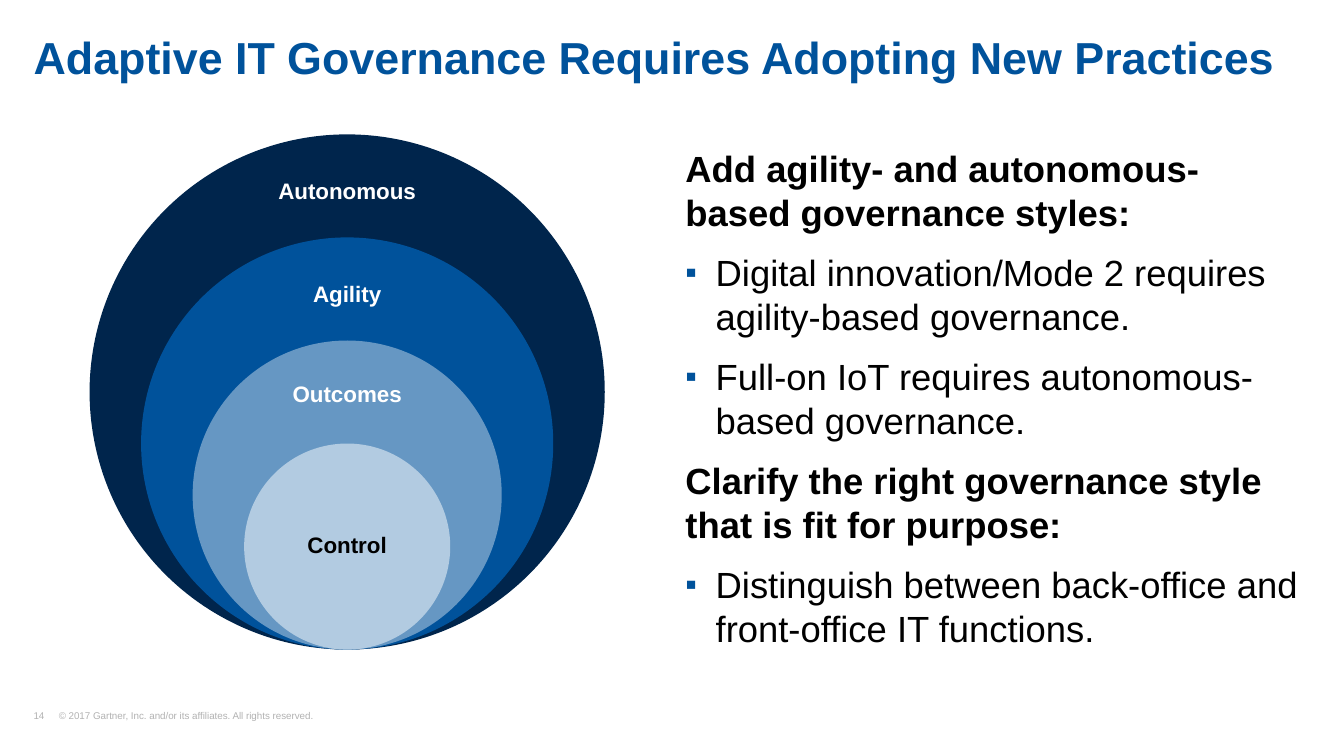
from dataclasses import dataclass

from lxml.etree import SubElement
from pptx import Presentation
from pptx.dml.color import RGBColor
from pptx.enum.shapes import MSO_SHAPE
from pptx.enum.text import MSO_ANCHOR, MSO_AUTO_SIZE, PP_ALIGN
from pptx.oxml.ns import qn
from pptx.util import Pt


@dataclass(frozen=True)
class Theme:
    font: str = "Arial"
    navy: str = "00254C"
    blue: str = "00529B"
    steel: str = "6697C3"
    pale: str = "B2CBE1"
    white: str = "FFFFFF"
    black: str = "000000"
    grey: str = "B2B2B2"
    title_size: float = 32
    body_size: float = 26
    label_size: float = 16
    footer_size: float = 7


THEME = Theme()

CENTER_X = 248
CIRCLES_BOTTOM = 464
RING_STEP = 73.6
LABEL_HEIGHT = 20

STYLES = [
    ("Autonomous", THEME.navy, THEME.white, 41.5),
    ("Agility", THEME.blue, THEME.white, 41),
    ("Outcomes", THEME.steel, THEME.white, 39),
    ("Control", THEME.pale, THEME.black, RING_STEP),
]

PRACTICES = [
    ("Add agility- and autonomous-based governance styles:", [
        "Digital innovation/Mode 2 requires agility-based governance.",
        "Full-on IoT requires autonomous-based governance.",
    ]),
    ("Clarify the right governance style that is fit for purpose:", [
        "Distinguish between back-office and front-office IT functions.",
    ]),
]


def write_text(paragraph, text, *, size, color, bold=False,
               align=PP_ALIGN.LEFT, line_spacing=1.0, space_after=0):
    paragraph.alignment = align
    paragraph.line_spacing = line_spacing
    paragraph.space_before = Pt(0)
    paragraph.space_after = Pt(space_after)
    run = paragraph.add_run()
    run.text = text
    run.font.name = THEME.font
    run.font.size = Pt(size)
    run.font.bold = bold
    run.font.color.rgb = RGBColor.from_string(color)


def place(shape, left, top, width, height):
    shape.left, shape.top = Pt(left), Pt(top)
    shape.width, shape.height = Pt(width), Pt(height)


def prepare_frame(shape, anchor=MSO_ANCHOR.TOP, top=0, right=0):
    frame = shape.text_frame
    frame.word_wrap = True
    frame.auto_size = MSO_AUTO_SIZE.NONE
    frame.vertical_anchor = anchor
    frame.margin_left = frame.margin_bottom = Pt(0)
    frame.margin_top, frame.margin_right = Pt(top), Pt(right)
    return frame


def add_text_frame(slide, left, top, width, height, **frame_format):
    shape = slide.shapes.add_textbox(Pt(left), Pt(top), Pt(width), Pt(height))
    return prepare_frame(shape, **frame_format)


def add_bullet(paragraph, indent):
    properties = paragraph._p.get_or_add_pPr()
    properties.set("marL", str(Pt(indent)))
    properties.set("indent", str(-Pt(indent)))
    color = SubElement(properties, qn("a:buClr"))
    SubElement(color, qn("a:srgbClr"), val=THEME.blue)
    SubElement(properties, qn("a:buSzPct"), val="90000")
    SubElement(properties, qn("a:buFont"), typeface=THEME.font)
    SubElement(properties, qn("a:buChar"), char="▪")


def add_tab_stop(paragraph, position):
    tabs = SubElement(paragraph._p.get_or_add_pPr(), qn("a:tabLst"))
    SubElement(tabs, qn("a:tab"), pos=str(Pt(position)), algn="l")


def add_title(slide, text):
    title = slide.shapes.title
    place(title, 24, 18, 911.5, 42.5)
    frame = prepare_frame(title, top=7.2)
    write_text(frame.paragraphs[0], text, size=THEME.title_size,
               color=THEME.blue, bold=True, line_spacing=0.9)


def add_circle(slide, diameter, fill):
    circle = slide.shapes.add_shape(
        MSO_SHAPE.OVAL, Pt(CENTER_X - diameter / 2),
        Pt(CIRCLES_BOTTOM - diameter), Pt(diameter), Pt(diameter))
    circle.shadow.inherit = False
    circle.fill.solid()
    circle.fill.fore_color.rgb = RGBColor.from_string(fill)
    circle.line.fill.background()


def add_governance_circles(slide):
    for index, (name, fill, color, label_offset) in enumerate(STYLES):
        diameter = RING_STEP * (len(STYLES) + 1 - index)
        add_circle(slide, diameter, fill)
        label_top = CIRCLES_BOTTOM - diameter + label_offset - LABEL_HEIGHT / 2
        frame = add_text_frame(slide, CENTER_X - 60, label_top, 120,
                               LABEL_HEIGHT, anchor=MSO_ANCHOR.MIDDLE)
        write_text(frame.paragraphs[0], name, size=THEME.label_size,
                   color=color, bold=True, align=PP_ALIGN.CENTER,
                   line_spacing=0.9)


def add_practices(slide):
    frame = add_text_frame(slide, 489.6, 104.4, 445.7, 358.5, right=3.6)
    lines = [(text, is_heading)
             for heading, bullets in PRACTICES
             for text, is_heading in [(heading, True)]
             + [(bullet, False) for bullet in bullets]]
    for index, (text, is_heading) in enumerate(lines):
        paragraph = frame.add_paragraph() if index else frame.paragraphs[0]
        if not is_heading:
            add_bullet(paragraph, 21.6)
        write_text(paragraph, text, size=THEME.body_size, color=THEME.black,
                   bold=is_heading, space_after=12)


def add_footer(slide, text):
    frame = add_text_frame(slide, 24, 507.6, 232.5, 8,
                           anchor=MSO_ANCHOR.BOTTOM)
    paragraph = frame.paragraphs[0]
    add_tab_stop(paragraph, 18)
    write_text(paragraph, text, size=THEME.footer_size, color=THEME.grey,
               line_spacing=0.9)


def main():
    presentation = Presentation()
    presentation.slide_width, presentation.slide_height = Pt(960), Pt(540)
    slide = presentation.slides.add_slide(presentation.slide_layouts[5])
    add_title(slide, "Adaptive IT Governance Requires Adopting New Practices")
    add_governance_circles(slide)
    add_practices(slide)
    add_footer(slide, "14\t© 2017 Gartner, Inc. and/or its affiliates. "
                      "All rights reserved.")
    presentation.save("out.pptx")


if __name__ == "__main__":
    main()
